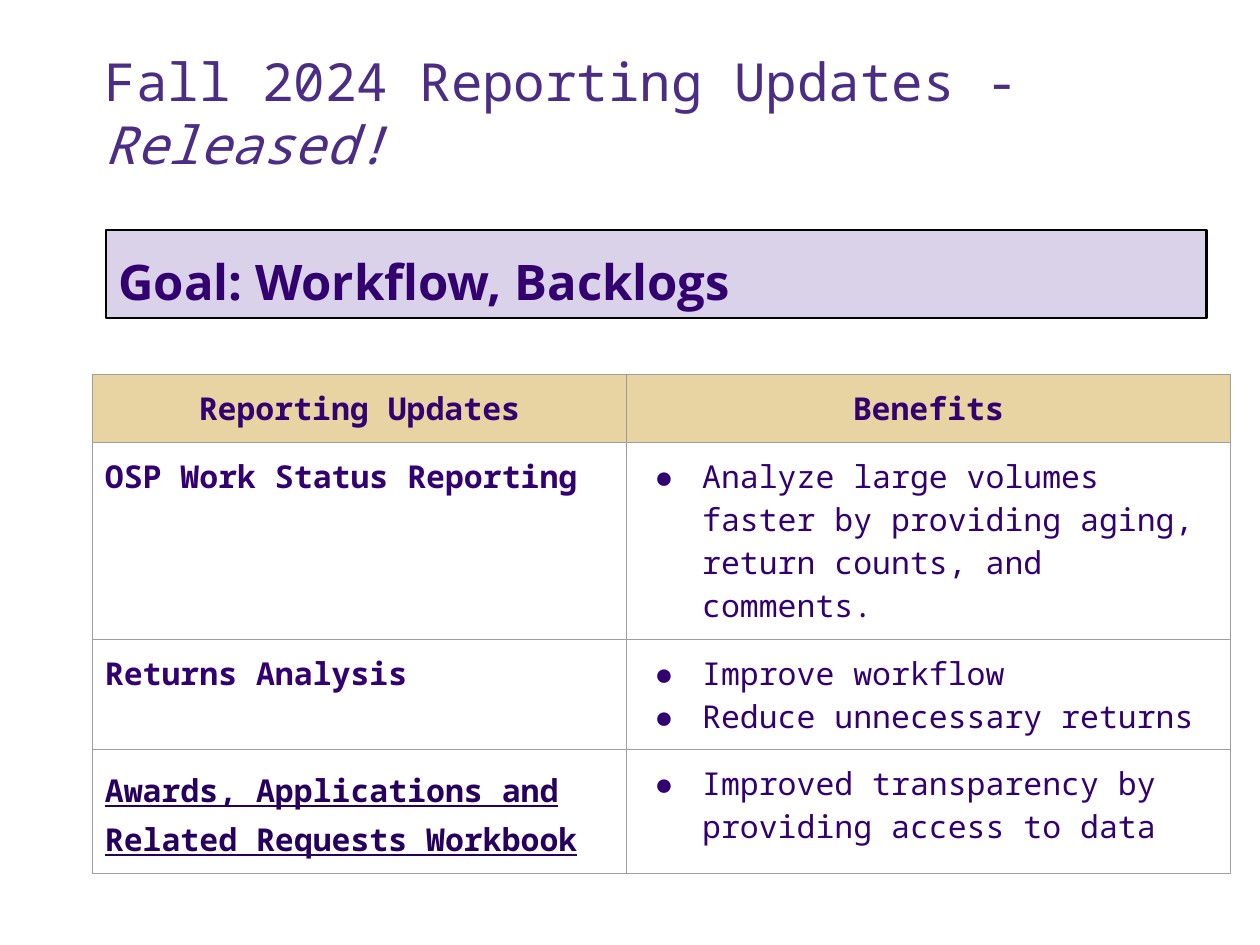
import pptx
import pptx.dml.color
import pptx.enum.shapes
import pptx.enum.text
import pptx.oxml
import pptx.oxml.ns
import pptx.util

Cm = pptx.util.Cm
Pt = pptx.util.Pt
RGBColor = pptx.dml.color.RGBColor
ALIGN = pptx.enum.text.PP_ALIGN
ANCHOR = pptx.enum.text.MSO_ANCHOR

TITLE_PURPLE = RGBColor(0x4B, 0x2E, 0x83)
PURPLE = RGBColor(0x33, 0x00, 0x6F)
LINK_PURPLE = RGBColor(0x26, 0x00, 0x5C)
LAVENDER = RGBColor(0xD9, 0xD2, 0xE9)
GOLD = RGBColor(0xE8, 0xD3, 0xA2)
GREY = RGBColor(0x9E, 0x9E, 0x9E)
WHITE = RGBColor(0xFF, 0xFF, 0xFF)
BLACK = RGBColor(0x00, 0x00, 0x00)

UPDATES = [
    ("OSP Work Status Reporting",
     ["Analyze large volumes faster by providing aging, return counts, and comments."]),
    ("Returns Analysis", ["Improve workflow", "Reduce unnecessary returns"]),
    ("Awards, Applications and Related Requests Workbook",
     ["Improved transparency by providing access to data"]),
]


class SlideBuilder:
    """Draws titles, banners and tables in one style on the current slide."""

    mono = "Noto Sans Mono"
    sans = "Open Sans"
    margin = Pt(7.2)

    def __init__(self, slide):
        self.slide = slide

    def format_runs(self, paragraph, size, color, name=mono, bold=False, underline=False):
        for run in paragraph.runs:
            run.font.name = name
            run.font.size = Pt(size)
            run.font.color.rgb = color
            run.font.bold = bold
            run.font.underline = underline

    def set_margins(self, target):
        target.margin_left = target.margin_right = self.margin
        target.margin_top = target.margin_bottom = self.margin

    def prepare_frame(self, shape, anchor):
        text_frame = shape.text_frame
        text_frame.word_wrap = True
        text_frame.vertical_anchor = anchor
        self.set_margins(text_frame)
        return text_frame

    def title(self, text, emphasis, left, top, width, height):
        shape = self.slide.shapes.add_textbox(left, top, width, height)
        paragraph = self.prepare_frame(shape, ANCHOR.BOTTOM).paragraphs[0]
        paragraph.text = text
        run = paragraph.add_run()
        run.text = emphasis
        run.font.italic = True
        self.format_runs(paragraph, 30, TITLE_PURPLE)

    def banner(self, text, left, top, width, height):
        shape = self.slide.shapes.add_shape(
            pptx.enum.shapes.MSO_SHAPE.RECTANGLE, left, top, width, height)
        shape.shadow.inherit = False
        shape.fill.solid()
        shape.fill.fore_color.rgb = LAVENDER
        shape.line.color.rgb = BLACK
        shape.line.width = Pt(1.5)
        text_frame = self.prepare_frame(shape, ANCHOR.TOP)
        text_frame.text = text
        paragraph = text_frame.paragraphs[0]
        paragraph.alignment = ALIGN.LEFT
        paragraph.line_spacing = 1.15
        self.format_runs(paragraph, 28, PURPLE, self.sans, bold=True)

    def borders(self, cell):
        properties = cell._tc.get_or_add_tcPr()
        for side in ("lnL", "lnR", "lnT", "lnB"):
            properties.append(pptx.oxml.parse_xml(
                f'<a:{side} {pptx.oxml.ns.nsdecls("a")} w="{Pt(0.75)}">'
                f'<a:solidFill><a:srgbClr val="{GREY}"/></a:solidFill></a:{side}>'))

    def bullet(self, paragraph):
        properties = paragraph._p.get_or_add_pPr()
        properties.set("marL", str(Cm(1.27)))
        properties.set("indent", str(-Cm(0.96)))
        namespace = pptx.oxml.ns.nsdecls("a")
        for xml in (f'<a:buClr {namespace}><a:srgbClr val="{PURPLE}"/></a:buClr>',
                    f'<a:buSzPts {namespace} val="1800"/>',
                    f'<a:buFont {namespace} typeface="{self.mono}"/>',
                    f'<a:buChar {namespace} char="●"/>'):
            properties.append(pptx.oxml.parse_xml(xml))

    def cell(self, cell, lines, fill=WHITE, color=PURPLE, bold=True, underline=False,
             align=ALIGN.LEFT, spacing=None, bulleted=False):
        self.borders(cell)
        cell.fill.solid()
        cell.fill.fore_color.rgb = fill
        self.set_margins(cell)
        cell.text_frame.text = "\n".join(lines)
        for paragraph in cell.text_frame.paragraphs:
            if bulleted:
                self.bullet(paragraph)
            paragraph.alignment = align
            paragraph.line_spacing = spacing
            self.format_runs(paragraph, 18, color, bold=bold, underline=underline)

    def table(self, headings, updates, left, top, widths, heights):
        table = self.slide.shapes.add_table(
            len(heights), len(widths), left, top, sum(widths), sum(heights)).table
        table.horz_banding = False
        for column, width in zip(table.columns, widths):
            column.width = width
        for row, height in zip(table.rows, heights):
            row.height = height
        for index, heading in enumerate(headings):
            self.cell(table.cell(0, index), [heading], fill=GOLD, align=ALIGN.CENTER)
        for row, (update, benefits) in enumerate(updates, start=1):
            link = {}
            if row == len(updates):
                link = {"color": LINK_PURPLE, "underline": True, "spacing": 1.15}
            self.cell(table.cell(row, 0), [update], **link)
            self.cell(table.cell(row, 1), benefits, bold=False, bulleted=True)


def main():
    presentation = pptx.Presentation()
    presentation.slide_width = Cm(25.4)
    presentation.slide_height = Cm(19.05)
    builder = SlideBuilder(presentation.slides.add_slide(presentation.slide_layouts[6]))
    builder.title("Fall 2024 Reporting Updates - ", "Released!",
                  Cm(1.86), Cm(1.04), Cm(22.73), Cm(2.74))
    builder.banner("Goal: Workflow, Backlogs", Cm(2.14), Cm(4.64), Cm(22.18), Cm(1.77))
    heights = [Cm(height) for height in (1.37, 3.97, 2.22, 2.5)]
    builder.table(("Reporting Updates", "Benefits"), UPDATES,
                  Cm(1.86), Cm(7.55), (Cm(10.77), Cm(12.17)), heights)
    presentation.save("out.pptx")


if __name__ == "__main__":
    main()
